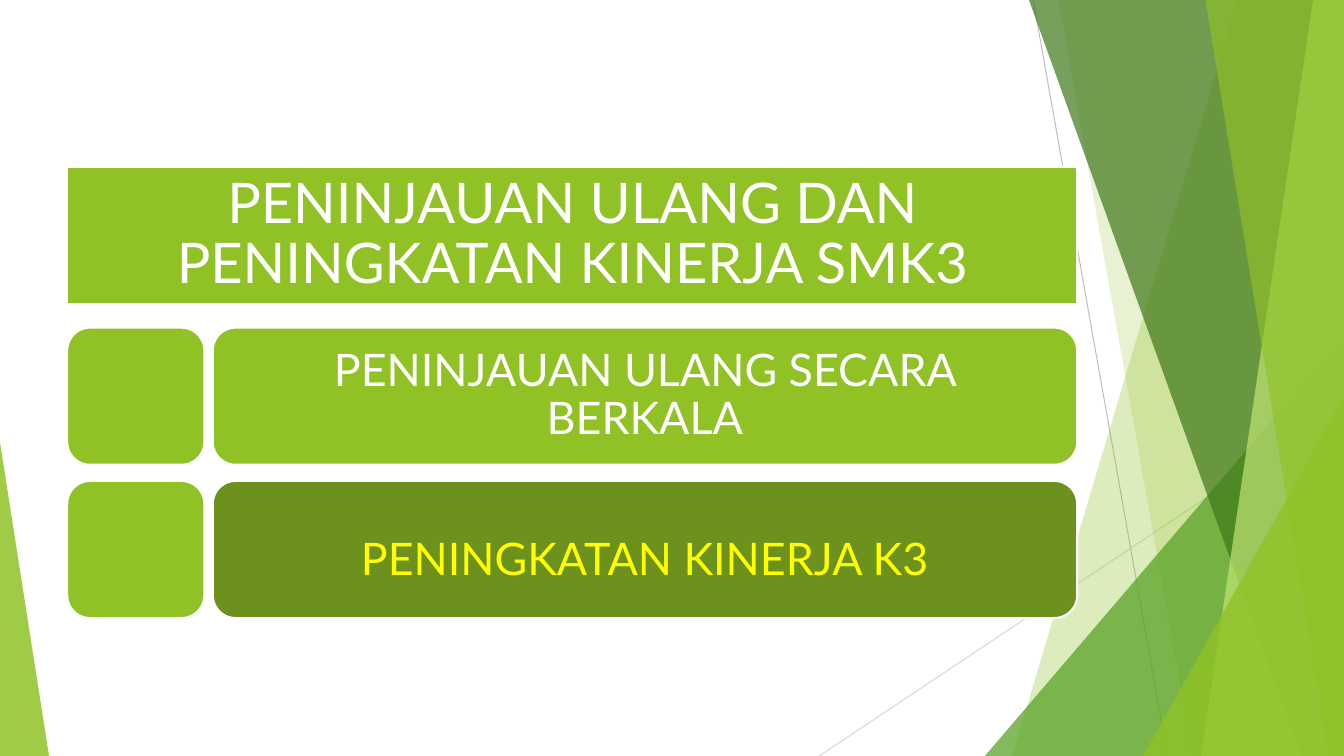
from lxml.etree import SubElement
from pptx import Presentation
from pptx.dml.color import RGBColor
from pptx.enum.shapes import MSO_CONNECTOR, MSO_SHAPE
from pptx.enum.text import MSO_ANCHOR, MSO_AUTO_SIZE, PP_ALIGN
from pptx.oxml import parse_xml
from pptx.oxml.ns import nsdecls, qn
from pptx.util import Pt

WIDTH, HEIGHT = 960, 540
GREEN, DARK_GREEN, WHITE, YELLOW = "90C226", "6C921D", "FFFFFF", "FFFF00"
LEFT, RIGHT, TITLE_TOP = 48, 769.5, 119
SIDE, GAP = 98, 6
ROWS_TOP, ROW_PITCH = 234, 109.5


def rgb(color):
    return RGBColor.from_string(color)


class SlideBuilder:
    """Draws styled elements on one slide, with lengths in points."""

    def __init__(self, prs, font):
        self.s = prs.slides.add_slide(prs.slide_layouts[5])
        self.font = font

    def line(self, x1, y1, x2, y2, color):
        c = self.s.shapes.add_connector(
            MSO_CONNECTOR.STRAIGHT, Pt(x1), Pt(y1), Pt(x2), Pt(y2))
        c.line.color.rgb = rgb(color)
        c.line.width = Pt(0.75)
        SubElement(c.element.spPr, qn("a:effectLst"))

    def tint(self, sp, color, opacity):
        sp.shadow.inherit = False
        sp.line.fill.background()
        sp.fill.solid()
        sp.fill.fore_color.rgb = rgb(color)
        clr = sp.element.spPr.find(qn("a:solidFill"))[0]
        SubElement(clr, qn("a:alpha")).set("val", str(opacity * 1000))

    def band(self, top_x, bottom_x, color, opacity):
        builder = self.s.shapes.build_freeform(Pt(top_x), 0)
        builder.add_line_segments([
            (Pt(WIDTH), 0), (Pt(WIDTH), Pt(HEIGHT)), (Pt(bottom_x), Pt(HEIGHT))])
        self.tint(builder.convert_to_shape(), color, opacity)

    def triangle(self, x, y, w, apex, color, opacity):
        sp = self.s.shapes.add_shape(
            MSO_SHAPE.ISOSCELES_TRIANGLE, Pt(x), Pt(y), Pt(w), Pt(HEIGHT - y))
        sp.adjustments[0] = apex
        self.tint(sp, color, opacity)

    def finish(self, sp, color):
        sp.fill.solid()
        sp.fill.fore_color.rgb = rgb(color)
        sp.line.color.rgb = rgb(WHITE)
        sp.line.width = Pt(1.5)

    def text(self, sp, text, size, color, insets):
        tf = sp.text_frame
        tf.text = text
        tf.word_wrap = True
        tf.auto_size = MSO_AUTO_SIZE.NONE
        tf.vertical_anchor = MSO_ANCHOR.MIDDLE
        tf.margin_left, tf.margin_top, tf.margin_right, tf.margin_bottom = map(Pt, insets)
        p = tf.paragraphs[0]
        p.alignment = PP_ALIGN.CENTER
        p.line_spacing = 0.9
        p.font.name = self.font
        p.font.size = Pt(size)
        p.font.color.rgb = rgb(color)

    def title(self, x, y, w, h, text):
        sp = self.s.shapes.title
        sp.left, sp.top, sp.width, sp.height = Pt(x), Pt(y), Pt(w), Pt(h)
        sp.element.spPr.append(parse_xml(
            f'<a:prstGeom {nsdecls("a")} prst="roundRect"><a:avLst>'
            '<a:gd name="adj" fmla="val 10000"/></a:avLst></a:prstGeom>'))
        self.finish(sp, GREEN)
        self.text(sp, text, 40, WHITE, (6, 4, 6, 4))
        sp.element.getparent().append(sp.element)

    def panel(self, x, y, w, h, fill):
        sp = self.s.shapes.add_shape(
            MSO_SHAPE.ROUNDED_RECTANGLE, Pt(x), Pt(y), Pt(w), Pt(h))
        sp.shadow.inherit = False
        self.finish(sp, fill)
        return sp


def main():
    prs = Presentation()
    prs.slide_width, prs.slide_height = Pt(WIDTH), Pt(HEIGHT)
    b = SlideBuilder(prs, "Lato")

    b.line(738, 0, 834, HEIGHT, "BFBFBF")
    b.line(WIDTH, 290, 585, HEIGHT, "D9D9D9")
    b.band(884, 723, GREEN, 30)
    b.band(756, 852, GREEN, 20)
    b.triangle(703.5, 240, 256.5, 1, "54A021", 72)
    b.band(735, 929.5, "3F7819", 70)
    b.band(938, 858, "C0E474", 70)
    b.band(861, 949, GREEN, 65)
    b.triangle(816.5, 283, 143.5, 1, GREEN, 80)
    b.triangle(0, 316, 35, 0, GREEN, 85)

    b.title(LEFT, TITLE_TOP, RIGHT - LEFT, SIDE,
            "PENINJAUAN ULANG DAN PENINGKATAN KINERJA SMK3")
    rows = [
        ("PENINJAUAN ULANG SECARA BERKALA", GREEN, WHITE, 18),
        ("PENINGKATAN KINERJA K3", DARK_GREEN, YELLOW, 34),
    ]
    wide_left = LEFT + SIDE + GAP
    for i, (text, fill, color, top_inset) in enumerate(rows):
        y = ROWS_TOP + i * ROW_PITCH
        b.panel(LEFT, y, SIDE, SIDE, GREEN)
        sp = b.panel(wide_left, y, RIGHT - wide_left, SIDE, fill)
        b.text(sp, text, 32, color, (18, top_inset, 18, 18))

    prs.save("out.pptx")


if __name__ == "__main__":
    main()
